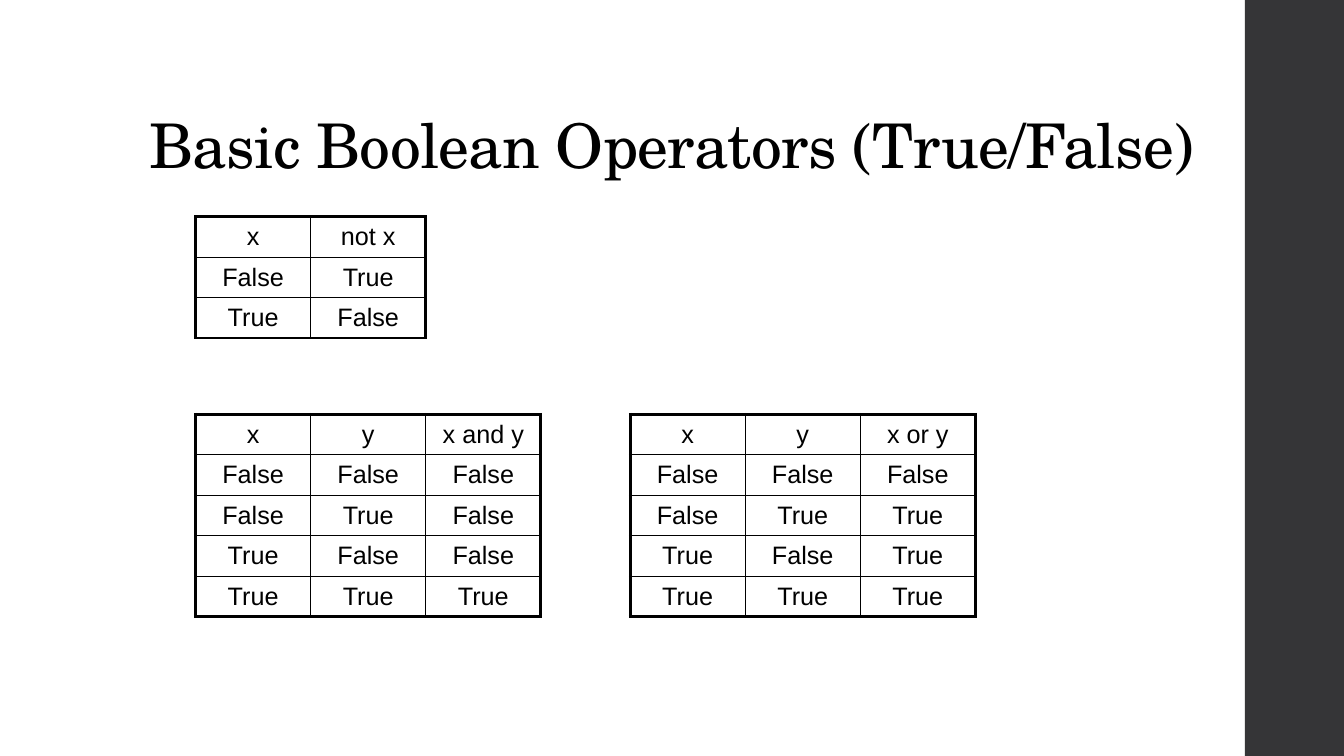
"""Build a slide with truth tables for the basic Boolean operators."""
import itertools
from dataclasses import dataclass
from typing import Callable

import lxml.etree
import pptx
import pptx.dml.color
import pptx.enum.shapes
import pptx.enum.text
import pptx.oxml.ns
import pptx.slide
import pptx.table
import pptx.util
from pptx.util import Cm

BLACK = "000000"
COLUMN_WIDTH = Cm(2.9)
ROW_HEIGHT = Cm(1.02)
OUTER_BORDER = 2.25
INNER_BORDER = 1


@dataclass
class TruthTable:
    left: float
    top: float
    variables: tuple[str, ...]
    expression: str
    operator: Callable[..., bool]

    def rows(self) -> list[list[str]]:
        cases = itertools.product((False, True), repeat=len(self.variables))
        return [[*self.variables, self.expression]] + [
            [str(value) for value in (*case, self.operator(*case))] for case in cases
        ]


TRUTH_TABLES = [
    TruthTable(4.93, 10.44, ("x", "y"), "x and y", lambda x, y: x and y),
    TruthTable(15.88, 10.44, ("x", "y"), "x or y", lambda x, y: x or y),
    TruthTable(4.93, 5.46, ("x",), "not x", lambda x: not x),
]


def color(hex_value: str) -> pptx.dml.color.RGBColor:
    return pptx.dml.color.RGBColor.from_string(hex_value)


def style_text(paragraph, font_name: str, size: float) -> None:
    for run in paragraph.runs:
        run.font.name = font_name
        run.font.size = pptx.util.Pt(size)
        run.font.color.rgb = color(BLACK)


def set_borders(cell: pptx.table._Cell, widths: dict[str, float]) -> None:
    qn = pptx.oxml.ns.qn
    properties = cell._tc.get_or_add_tcPr()
    for position, (side, width) in enumerate(widths.items()):
        border = lxml.etree.Element(qn(f"a:ln{side}"), w=str(pptx.util.Pt(width)))
        fill = lxml.etree.SubElement(border, qn("a:solidFill"))
        lxml.etree.SubElement(fill, qn("a:srgbClr"), val=BLACK)
        properties.insert(position, border)


def add_truth_table(slide: pptx.slide.Slide, truth: TruthTable) -> None:
    rows = truth.rows()
    row_count, column_count = len(rows), len(rows[0])
    table = slide.shapes.add_table(
        row_count, column_count, Cm(truth.left), Cm(truth.top),
        COLUMN_WIDTH * column_count, ROW_HEIGHT * row_count,
    ).table
    table.first_row = False
    table.horz_banding = False
    for column in table.columns:
        column.width = COLUMN_WIDTH
    for r, row in enumerate(rows):
        table.rows[r].height = ROW_HEIGHT
        for c, value in enumerate(row):
            cell = table.cell(r, c)
            cell.fill.background()
            cell.vertical_anchor = pptx.enum.text.MSO_ANCHOR.MIDDLE
            cell.text_frame.text = value
            paragraph = cell.text_frame.paragraphs[0]
            paragraph.alignment = pptx.enum.text.PP_ALIGN.CENTER
            style_text(paragraph, "Arial", 18)
            on_edge = {
                "L": c == 0,
                "R": c == column_count - 1,
                "T": r == 0,
                "B": r == row_count - 1,
            }
            set_borders(cell, {
                side: OUTER_BORDER if outer else INNER_BORDER
                for side, outer in on_edge.items()
            })


def add_side_band(slide: pptx.slide.Slide) -> None:
    band = slide.shapes.add_shape(
        pptx.enum.shapes.MSO_SHAPE.RECTANGLE, Cm(31.37), Cm(0), Cm(2.5), Cm(19.05)
    )
    band.shadow.inherit = False
    band.fill.solid()
    band.fill.fore_color.rgb = color("353537")
    band.line.fill.background()


def add_title(slide: pptx.slide.Slide, text: str) -> None:
    frame = slide.shapes.add_textbox(Cm(3.51), Cm(1.02), Cm(26.92), Cm(3.68)).text_frame
    frame.word_wrap = True
    frame.vertical_anchor = pptx.enum.text.MSO_ANCHOR.BOTTOM
    frame.text = text
    heading = frame.paragraphs[0]
    heading.line_spacing = 0.9
    style_text(heading, "TeX Gyre Schola", 44)
    heading.runs[0].font._element.set("spc", "-50")


def main() -> None:
    presentation = pptx.Presentation()
    presentation.slide_width = Cm(33.87)
    presentation.slide_height = Cm(19.05)
    slide = presentation.slides.add_slide(presentation.slide_layouts[6])
    add_side_band(slide)
    add_title(slide, "Basic Boolean Operators (True/False)")
    for truth in TRUTH_TABLES:
        add_truth_table(slide, truth)
    presentation.save("out.pptx")


if __name__ == "__main__":
    main()
